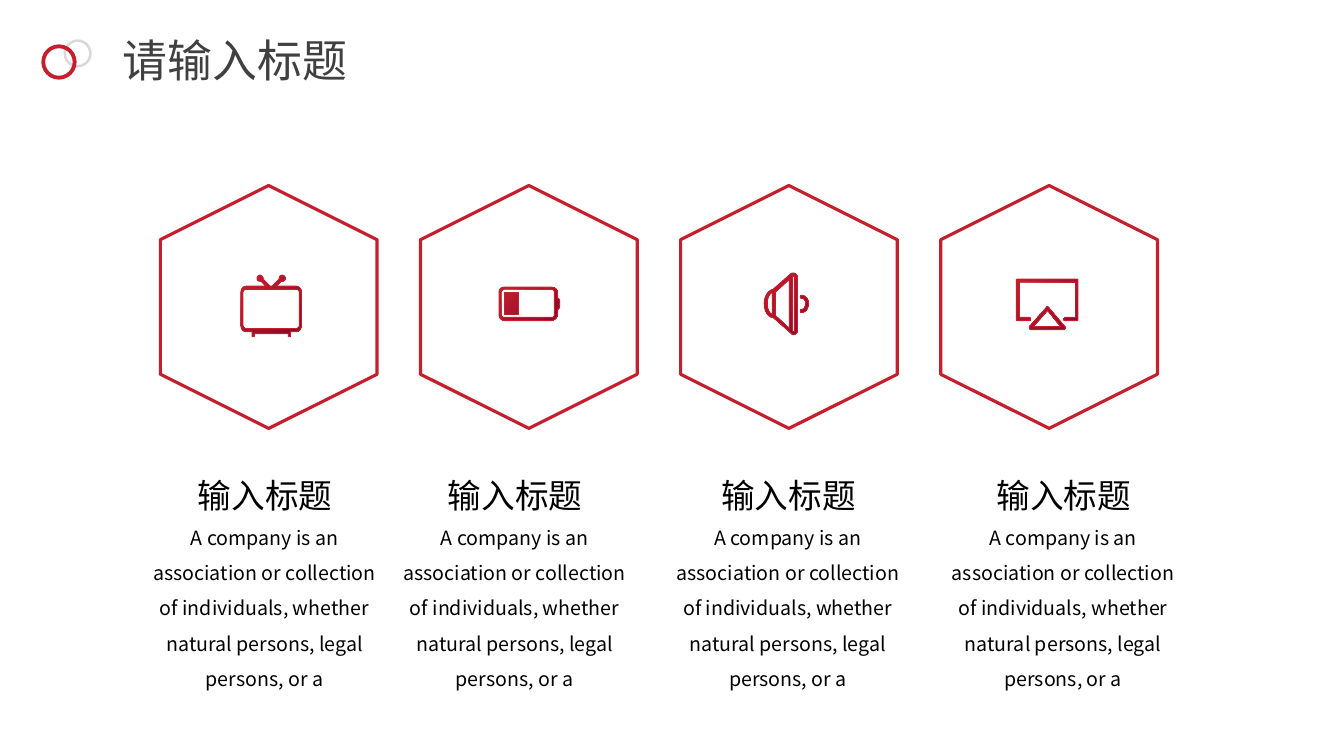
import pptx
import pptx.util
import pptx.dml.color
import pptx.enum.shapes
import pptx.enum.text
import lxml.etree

Inches = pptx.util.Inches
Pt = pptx.util.Pt
RGB = pptx.dml.color.RGBColor.from_string
SHAPE = pptx.enum.shapes.MSO_SHAPE
FIT = pptx.enum.text.MSO_AUTO_SIZE
CENTER = pptx.enum.text.PP_ALIGN.CENTER

FONT = "Noto Sans CJK SC"
COLORS = {
    "red": "C51F2D",
    "wine": "83062E",
    "ring": "D9D9D9",
    "title": "404040",
    "text": "000000",
}
BODY = ("A company is an association or collection of individuals, "
        "whether natural persons, legal persons, or a")

# Icon outlines in hundredths of an inch; a~b~c is a Bezier curve ending at c.
TELEVISION = [
    "58,50 58,52~56,53~55,53 5,53 4,53~2,52~2,50 2,17 2,15~4,14~5,14 "
    "55,14 56,14~58,15~58,17",
    "55,11 35,11 40,6 41,6 43,6~44,5~44,3 44,2~43,0~41,0 39,0~38,2~38,3 "
    "38,4 31,11 29,11 22,4 22,3 22,2~20,0~19,0 17,0~16,2~16,3 "
    "16,5~17,6~19,6 20,6 25,11 5,11 2,11~0,14~0,17 0,50 0,53~2,56~5,56 "
    "11,56 11,60 11,61~11,61~12,61 13,61~13,61~13,60 13,58 47,58 47,60 "
    "47,61~47,61~48,61 49,61~49,61~49,60 49,56 55,56 58,56~60,53~60,50 "
    "60,17 60,14~58,11~55,11",
]
BATTERY = [
    "55,27 55,29~54,30~52,30 5,30 4,30~2,29~2,27 2,5 2,4~4,2~5,2 "
    "52,2 54,2~55,4~55,5",
    "58,11 58,5 58,2~55,0~52,0 5,0 2,0~0,2~0,5 0,27 0,30~2,33~5,33 "
    "52,33 55,33~58,30~58,27 58,22 59,22~60,20~60,19 60,13 60,12~59,11~58,11",
    "5,27 19,27 19,5 5,5",
]
SPEAKER = [
    "30,57 30,57~30,58~29,58 29,58~28,58~28,57 28,3 29,3 30,3~30,3~30,4",
    "25,55 11,42 11,18 12,18 25,6",
    "8,41 5,40~3,36~3,30 3,25~5,20~8,19",
    "33,4 33,2~31,0~29,0 28,0~27,0~26,1 9,16 4,17~0,23~0,30 "
    "0,38~4,44~9,44 26,59 27,60~28,61~29,61 31,61~33,59~33,57",
    "37,22 36,22~36,23~36,23 36,24~36,25~37,25 40,25~41,27~41,30 "
    "41,33~40,36~37,36 36,36~36,36~36,37 36,38~36,39~37,39 "
    "41,39~44,35~44,30 44,26~41,22~37,22",
]
SCREEN = [
    "17,47 31,31 44,47",
    "48,47 32,28 32,28~31,27~31,27 30,27~30,28~30,28 13,47 13,48 "
    "13,49~14,50~14,50 47,50 48,50~49,49~49,48",
    "60,0 2,0 1,0~0,0~0,1 0,40 0,41~1,41~2,41 13,41 14,41~14,41~14,40 "
    "14,39~14,38~13,38 3,38 3,3 59,3 59,38 49,38 48,38~47,39~47,40 "
    "47,41~48,41~49,41 60,41 61,41~61,41~61,40 61,1 61,0~61,0~60,0",
]


def outline_points(outline):
    """Turn an outline string into points, with each curve cut into steps."""
    points = []
    for token in outline.split():
        knots = [tuple(float(v) for v in k.split(",")) for k in token.split("~")]
        if len(knots) == 1:
            points.append(knots[0])
            continue
        start = points[-1]
        for step in range(1, 7):
            t = step / 6
            weights = ((1 - t) ** 3, 3 * t * (1 - t) ** 2, 3 * t * t * (1 - t), t ** 3)
            points.append(tuple(
                sum(w * k[axis] for w, k in zip(weights, [start] + knots))
                for axis in (0, 1)))
    return [(Inches(x / 100), Inches(y / 100)) for x, y in points]


def add_text(box, text, size, color, wrap=True, **paragraph_format):
    tb = s.shapes.add_textbox(*[Inches(v) for v in box])
    tf = tb.text_frame
    tf.word_wrap = wrap
    tf.auto_size = FIT.NONE if wrap else FIT.SHAPE_TO_FIT_TEXT
    p = tf.paragraphs[0]
    for key, value in paragraph_format.items():
        setattr(p, key, value)
    r = p.add_run()
    r.text = text
    for key, value in {"name": FONT, "size": Pt(size)}.items():
        setattr(r.font, key, value)
    r.font.color.rgb = RGB(COLORS[color])
    ea = lxml.etree.SubElement(r._r.get_or_add_rPr(), pptx.oxml.ns.qn("a:ea"))
    ea.set("typeface", FONT)


prs = pptx.Presentation()
prs.slide_width, prs.slide_height = Inches(13.33), Inches(7.5)
s = prs.slides.add_slide(prs.slide_layouts[6])

# Title with two rings
for x, y, size, thickness, color in [
    (0.63, 0.39, 0.28, 0.09, "ring"),
    (0.41, 0.44, 0.35, 0.11, "red"),
]:
    ring = s.shapes.add_shape(
        SHAPE.DONUT, Inches(x), Inches(y), Inches(size), Inches(size))
    ring.shadow.inherit = False
    ring.adjustments[0] = thickness
    ring.fill.solid()
    ring.fill.fore_color.rgb = RGB(COLORS[color])
    ring.line.fill.background()
add_text((1.12, 0.28, 2.45, 0.64), "请输入标题", 32, "title", wrap=False)

# Hexagon frames, equally spaced
for i in range(4):
    hexagon = s.shapes.add_shape(
        SHAPE.HEXAGON, Inches(1.46 + i * 2.58), Inches(1.97),
        Inches(2.41), Inches(2.15))
    hexagon.shadow.inherit = False
    hexagon.rotation = 270
    hexagon.adjustments[0] = 0.25
    hexagon.fill.background()
    hexagon.line.color.rgb = RGB(COLORS["red"])
    hexagon.line.width = Pt(2.25)

# Icons
for x, y, icon_outlines in [
    (2.39, 2.73, TELEVISION),
    (4.95, 2.85, BATTERY),
    (7.58, 2.71, SPEAKER),
    (10.08, 2.77, SCREEN),
]:
    outlines = [outline_points(o) for o in icon_outlines]
    builder = s.shapes.build_freeform(*outlines[0][0])
    for i, points in enumerate(outlines):
        if i:
            builder.move_to(*points[0])
        builder.add_line_segments(points[1:], close=True)
    icon = builder.convert_to_shape(Inches(x), Inches(y))
    icon.shadow.inherit = False
    icon.fill.gradient()
    icon.fill.gradient_angle = 315
    for stop, position, color in zip(icon.fill.gradient_stops, (0, 1), ("red", "wine")):
        stop.position = position
        stop.color.rgb = RGB(COLORS[color])
    icon.line.color.rgb = RGB(COLORS["red"])
    icon.line.width = Pt(0.75)

# Captions
for x in (1.26, 3.74, 6.45, 9.18):
    add_text((x + 0.05, 5.05, 2.63, 0.67), BODY, 14, "text",
             alignment=CENTER, line_spacing=1.5)
    add_text((x, 4.66, 2.74, 0.28), "输入标题", 24, "text", alignment=CENTER)

prs.save("out.pptx")
